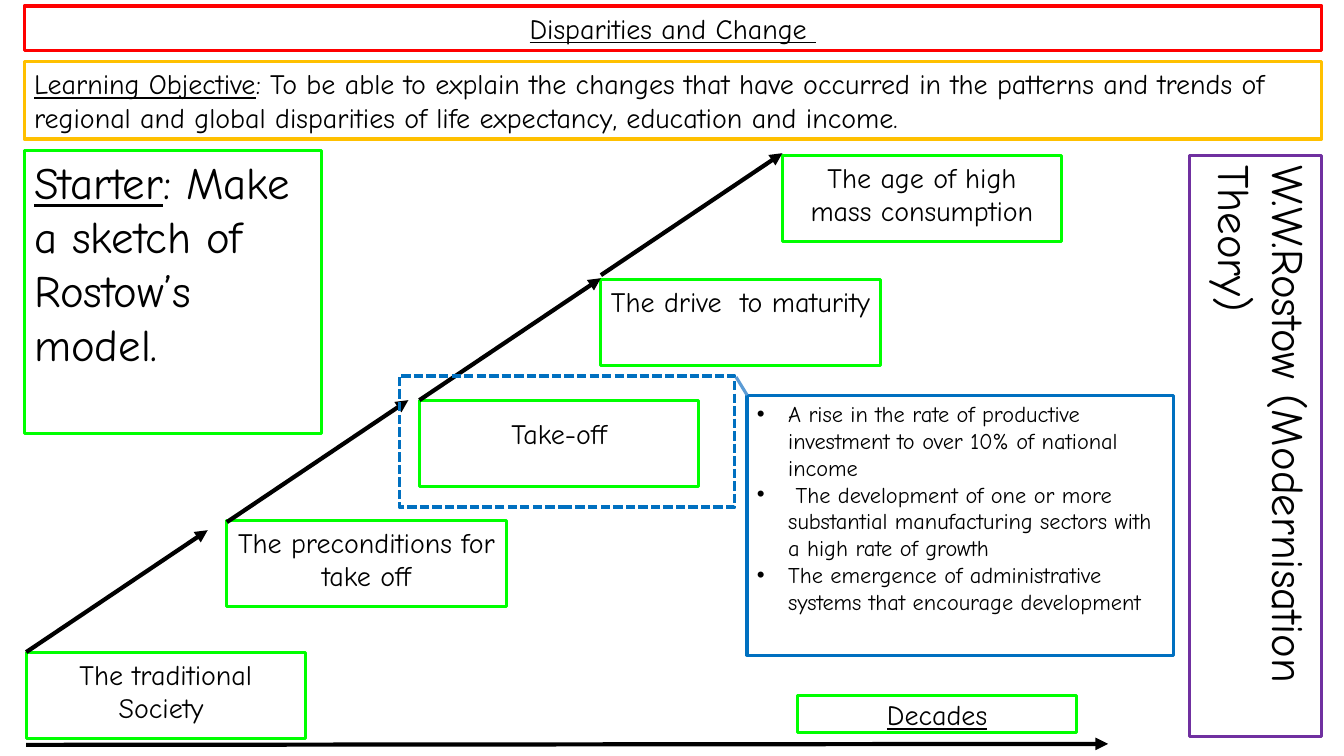
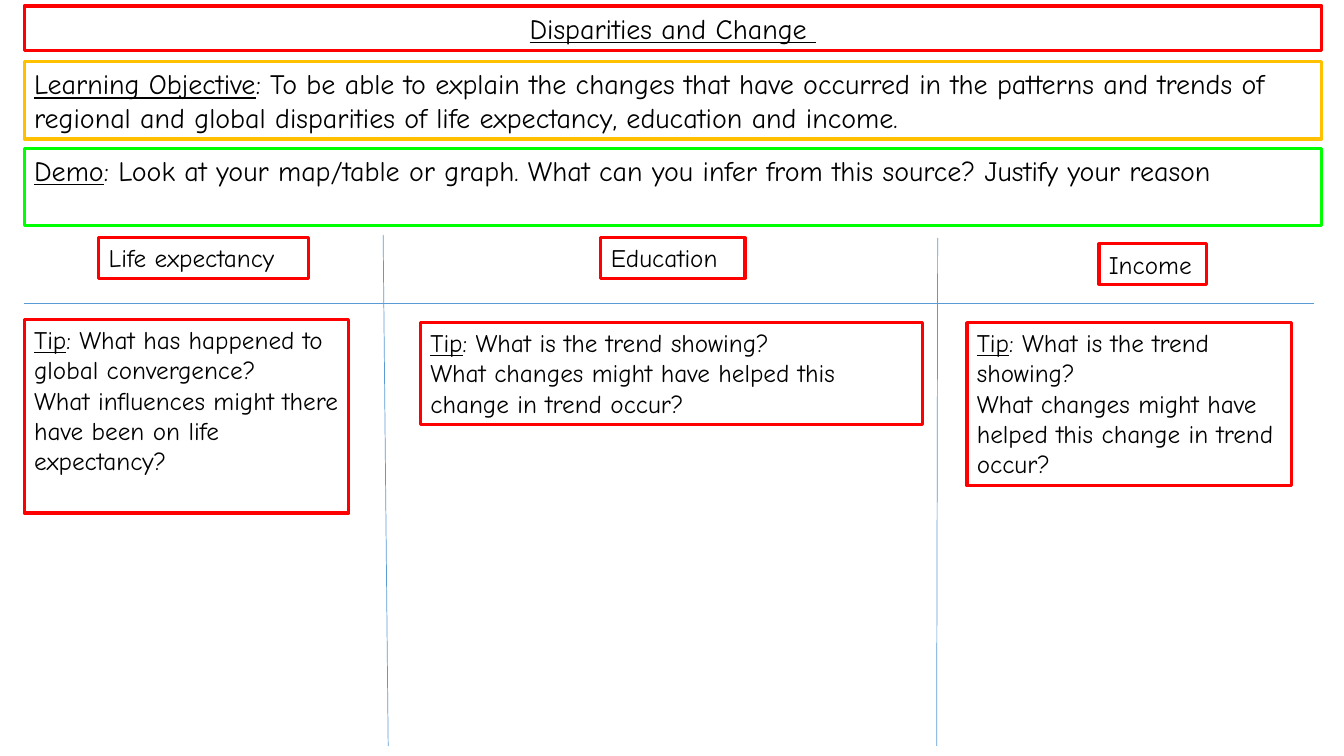
import pptx
import pptx.dml.color
import pptx.enum.dml
import pptx.enum.shapes
import pptx.enum.text
import pptx.oxml
import pptx.oxml.ns
import pptx.util

Inches = pptx.util.Inches
Pt = pptx.util.Pt
ALIGN = pptx.enum.text.PP_ALIGN
ANCHOR = pptx.enum.text.MSO_ANCHOR

RED, GREEN, GOLD = "FF0000", "00FF00", "FFC000"
BLUE, PALE_BLUE, PURPLE, BLACK = "0070C0", "5B9BD5", "7030A0", "000000"


def rgb(value):
    return pptx.dml.color.RGBColor.from_string(value)


def add_xml(parent, tag, **attributes):
    """Append an empty drawing element such as a:tailEnd."""
    element = pptx.oxml.parse_xml(f"<{tag} {pptx.oxml.ns.nsdecls('a')}/>")
    for name, value in attributes.items():
        element.set(name, value)
    parent.append(element)


class Lesson:
    font = "Comic Neue"
    border = 2.25
    left, width = 0.24, 12.87
    title = "Disparities and Change "
    objective = (": To be able to explain the changes that have occurred in the patterns and trends of "
                 "regional and global disparities of life expectancy, education and income.")

    def __init__(self):
        self.deck = pptx.Presentation()
        self.deck.slide_width = Inches(13.33)
        self.deck.slide_height = Inches(7.5)
        self.slide = None

    def add_page(self):
        """Start a slide with the title and learning objective bands."""
        self.slide = self.deck.slides.add_slide(self.deck.slide_layouts[5])
        heading = self.slide.shapes.title
        heading.left, heading.top = Inches(self.left), Inches(0.06)
        heading.width, heading.height = Inches(self.width), Inches(0.44)
        self.outline(heading, RED)
        self.fill_text(heading, [""], lead=self.title, align=ALIGN.CENTER)
        self.band(0.61, GOLD, "Learning Objective", self.objective)

    def outline(self, shape, color):
        shape.fill.background()
        shape.line.color.rgb = rgb(color)
        shape.line.width = Pt(self.border)

    def fill_text(self, shape, paragraphs, lead="", size=20, align=ALIGN.LEFT, anchor=ANCHOR.TOP, bullets=False):
        """Fill a shape with paragraphs; lead is underlined and opens the first one."""
        frame = shape.text_frame
        frame.word_wrap = True
        frame.auto_size = pptx.enum.text.MSO_AUTO_SIZE.NONE
        frame.vertical_anchor = anchor
        for index, text in enumerate(paragraphs):
            para = frame.add_paragraph() if index else frame.paragraphs[0]
            para.alignment = align
            if bullets:
                properties = para._p.get_or_add_pPr()
                properties.set("marL", str(Inches(0.31)))
                properties.set("indent", str(-Inches(0.31)))
                add_xml(properties, "a:buFont", typeface="Arial")
                add_xml(properties, "a:buChar", char="•")
            if lead and index == 0:
                self.span(para, lead, size, True)
            if text:
                self.span(para, text, size, False)

    def span(self, para, text, size, underline):
        run = para.add_run()
        run.text = text
        run.font.name = self.font
        run.font.size = Pt(size)
        run.font.underline = underline
        run.font.color.rgb = rgb(BLACK)

    def box(self, left, top, width, height, color, paragraphs, **style):
        shape = self.slide.shapes.add_textbox(Inches(left), Inches(top), Inches(width), Inches(height))
        self.outline(shape, color)
        self.fill_text(shape, paragraphs, **style)
        return shape

    def band(self, top, color, lead, text):
        self.box(self.left, top, self.width, 0.77, color, [text], lead=lead)

    def dashed_frame(self, left, top, width, height, color):
        shape = self.slide.shapes.add_shape(
            pptx.enum.shapes.MSO_SHAPE.RECTANGLE, Inches(left), Inches(top), Inches(width), Inches(height))
        shape.shadow.inherit = False
        self.outline(shape, color)
        shape.line.dash_style = pptx.enum.dml.MSO_LINE.SQUARE_DOT
        return shape

    def line(self, start, end, color, width, arrow=False):
        connector = self.slide.shapes.add_connector(
            pptx.enum.shapes.MSO_CONNECTOR.STRAIGHT, *map(Inches, start + end))
        connector.line.color.rgb = rgb(color)
        connector.line.width = Pt(width)
        properties = connector._element.spPr
        if arrow:
            add_xml(properties.find(pptx.oxml.ns.qn("a:ln")), "a:tailEnd", type="triangle")
        add_xml(properties, "a:effectLst")
        return connector

    def arrow(self, start, end):
        self.line(start, end, BLACK, 3, arrow=True)


def add_rostow_model(lesson):
    lesson.add_page()
    lesson.box(lesson.left, 1.49, 2.95, 2.81, GREEN, [": Make a sketch of Rostow’s model."],
               lead="Starter", size=32)

    stage_width, stage_height = 2.77, 0.86
    stages = [
        (0.26, 6.47, "The traditional Society "),
        (2.25, 5.16, "The preconditions for take off"),
        (5.96, 2.77, "The drive  to maturity "),
        (7.76, 1.54, "The age of high mass consumption"),
    ]
    for left, top, text in stages:
        lesson.box(left, top, stage_width, stage_height, GREEN, [text], align=ALIGN.CENTER)
    take_off = lesson.box(4.16, 3.97, stage_width, stage_height, GREEN, ["Take-off"],
                          align=ALIGN.CENTER, anchor=ANCHOR.MIDDLE)
    take_off.text_frame.margin_bottom = Inches(0.25)

    rise_across, rise_up = 1.8, 1.21
    for left, top in [(0.26, 6.47), (2.25, 5.18), (4.16, 3.97), (5.96, 2.73)]:
        lesson.arrow((left, top), (left + rise_across, top - rise_up))
    lesson.arrow((0.26, 7.39), (10.99, 7.38))
    lesson.box(7.91, 6.9, stage_width, 0.37, GREEN, [""], lead="Decades",
               align=ALIGN.CENTER, anchor=ANCHOR.MIDDLE)

    theory = lesson.box(9.57, 3.77, 5.77, 1.31, PURPLE, ["W.W.Rostow (Modernisation Theory)"], size=32)
    theory.rotation = 90

    callout = [
        lesson.dashed_frame(3.96, 3.73, 3.33, 1.3, BLUE),
        lesson.box(7.41, 3.92, 4.23, 2.58, BLUE, [
            "A rise in the rate of productive investment to over 10% of national income",
            " The development of one or more substantial manufacturing sectors with a high rate of growth",
            "The emergence of administrative systems that encourage development",
        ], size=16, bullets=True),
        lesson.line((7.3, 3.74), (7.41, 3.92), PALE_BLUE, lesson.border),
    ]
    lesson.slide.shapes.add_group_shape(callout)


def add_source_demo(lesson):
    lesson.add_page()
    lesson.band(1.47, GREEN, "Demo",
                ": Look at your map/table or graph. What can you infer from this source? Justify your reason")

    for left, top, width, heading in [(0.98, 2.36, 2.08, "Life expectancy"),
                                      (5.96, 2.36, 1.43, "Education"),
                                      (10.9, 2.42, 1.07, "Income")]:
        lesson.box(left, top, width, 0.4, RED, [heading], size=18)

    for start, end in [((0.24, 3.01), (13.03, 3.01)),
                       ((3.8, 2.33), (3.85, 7.4)),
                       ((9.3, 2.36), (9.29, 7.4))]:
        lesson.line(start, end, PALE_BLUE, 0.5)

    convergence_tip = [": What has happened to global convergence?",
                       "What influences might there have been on life expectancy?"]
    trend_tip = [": What is the trend showing?",
                 "What changes might have helped this change in trend occur?"]
    for left, top, width, height, tip in [(0.24, 3.17, 3.22, 1.92, convergence_tip),
                                          (4.17, 3.2, 4.98, 1.01, trend_tip),
                                          (9.59, 3.2, 3.22, 1.62, trend_tip)]:
        lesson.box(left, top, width, height, RED, tip, lead="Tip", size=18)


def main():
    lesson = Lesson()
    add_rostow_model(lesson)
    add_source_demo(lesson)
    lesson.deck.save("out.pptx")


if __name__ == "__main__":
    main()
